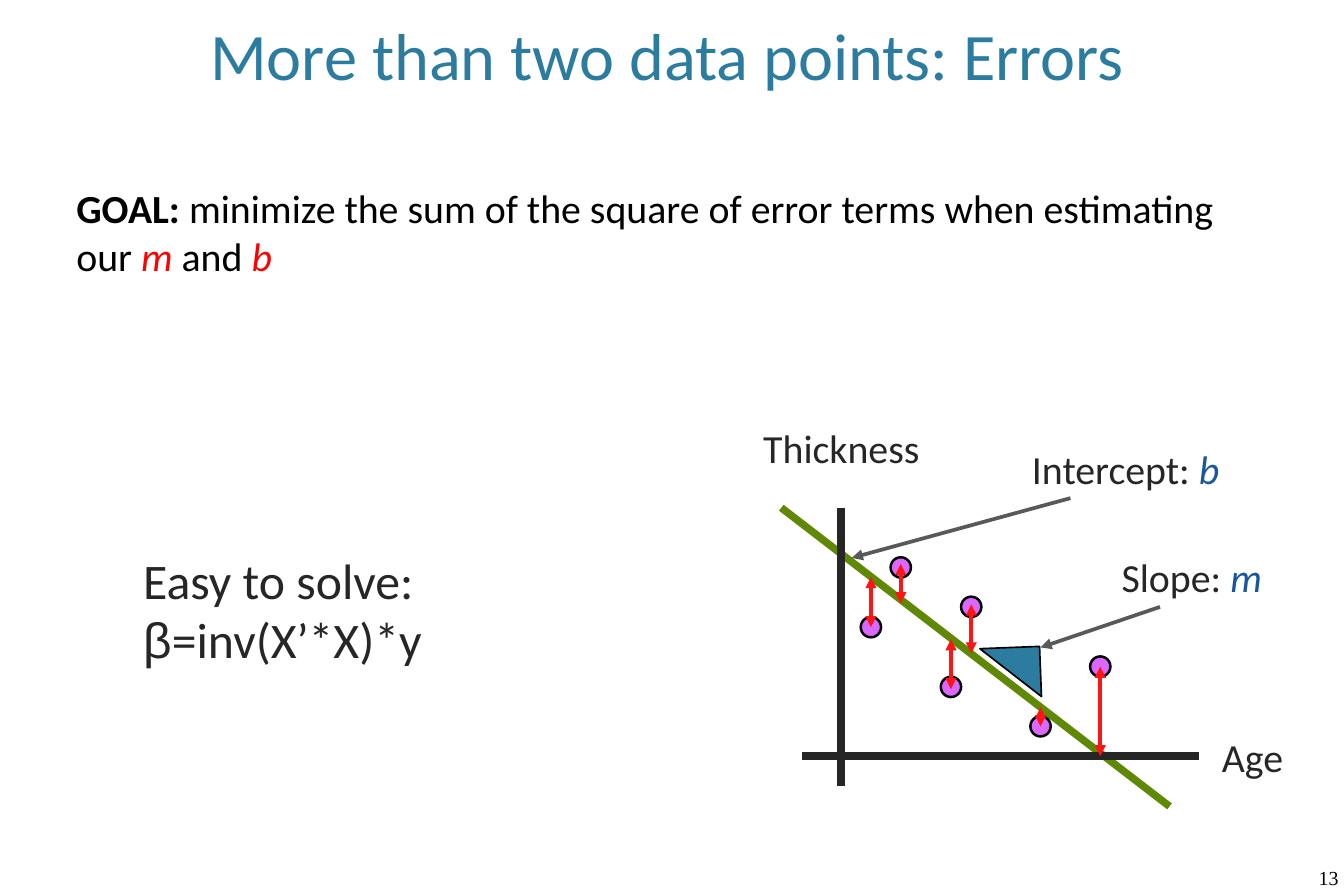
"""Builds a slide on fitting a line to several data points by least squares."""
import pptx
import pptx.dml.color
import pptx.enum.shapes
import pptx.enum.text
import pptx.oxml.ns
import pptx.util
from lxml import etree
from pptx.util import Inches

BLACK = pptx.dml.color.RGBColor(0x00, 0x00, 0x00)
DARK = pptx.dml.color.RGBColor(0x26, 0x26, 0x26)
GRAY = pptx.dml.color.RGBColor(0x59, 0x59, 0x59)
TEAL = pptx.dml.color.RGBColor(0x2C, 0x7C, 0x9F)
BLUE = pptx.dml.color.RGBColor(0x18, 0x57, 0x9B)
RED = pptx.dml.color.RGBColor(0xFF, 0x00, 0x00)
ERROR_RED = pptx.dml.color.RGBColor(0xFD, 0x14, 0x14)
GREEN = pptx.dml.color.RGBColor(0x5F, 0x88, 0x04)
VIOLET = pptx.dml.color.RGBColor(0xDA, 0x68, 0xFF)

deck = pptx.Presentation()
deck.slide_width, deck.slide_height = Inches(11.25), Inches(7.5)
slide = deck.slides.add_slide(deck.slide_layouts[6])


def add_text(left, top, width, height, size, lines, wrap=True):
    """Add lines of runs, each run being (text, colour, style, font)."""
    box = slide.shapes.add_textbox(Inches(left), Inches(top), Inches(width), Inches(height))
    frame = box.text_frame
    frame.word_wrap = wrap
    for index, line in enumerate(lines):
        paragraph = frame.add_paragraph() if index else frame.paragraphs[0]
        for text, color, style, font in line:
            run = paragraph.add_run()
            run.text = text
            run.font.name = font
            run.font.size = pptx.util.Pt(size)
            run.font.color.rgb = color
            run.font.bold = style == "bold"
            run.font.italic = style == "italic"
    return frame


def add_line(x1, y1, x2, y2, color, weight, arrowheads=()):
    """Add a straight line with arrowheads at the named ends."""
    line = slide.shapes.add_connector(
        pptx.enum.shapes.MSO_CONNECTOR.STRAIGHT, Inches(x1), Inches(y1), Inches(x2), Inches(y2))
    line.line.color.rgb = color
    line.line.width = pptx.util.Pt(weight)
    for end in arrowheads:
        etree.SubElement(line.line._get_or_add_ln(), pptx.oxml.ns.qn(f"a:{end}"), type="triangle")
    etree.SubElement(line._element.spPr, pptx.oxml.ns.qn("a:effectLst"))


add_text(10.94, 7.2, 0.62, 0.3, 12, [[("13", BLACK, "", "Times New Roman")]])

title = add_text(0.21, 0.02, 10.75, 0.81, 40,
                 [[("More than two data points: Errors", TEAL, "", "Calibri")]])
title.vertical_anchor = pptx.enum.text.MSO_ANCHOR.BOTTOM
title.paragraphs[0].alignment = pptx.enum.text.PP_ALIGN.CENTER

add_text(0.54, 1.49, 10.18, 1.72, 24, [[
    ("GOAL: ", BLACK, "bold", "Calibri"),
    ("minimize the sum of the square of error terms when estimating our ", BLACK, "", "Calibri"),
    ("m ", RED, "italic", "Calibri"),
    ("and ", BLACK, "", "Calibri"),
    ("b", RED, "italic", "Calibri"),
]])

add_line(6.54, 4.25, 9.79, 6.75, GREEN, 4.5)
add_line(7.13, 4.67, 8.96, 4.17, GRAY, 2.25, ["headEnd"])

slope = slide.shapes.add_shape(
    pptx.enum.shapes.MSO_SHAPE.RIGHT_TRIANGLE,
    Inches(8.21), Inches(5.42), Inches(0.5), Inches(0.42))
slope.rotation = 177.8
slope.shadow.inherit = False
slope.fill.solid()
slope.fill.fore_color.rgb = TEAL
slope.line.color.rgb = BLACK
slope.line.width = pptx.util.Pt(1)

for left, top, width, label, symbol in [
    (8.54, 3.67, 2.1, "Intercept: ", "b"),
    (9.29, 4.58, 1.66, "Slope: ", "m"),
    (6.29, 3.5, 1.78, "Thickness", ""),
    (10.13, 6.08, 0.8, "Age", ""),
]:
    runs = [(label, DARK, "", "Calibri")]
    if symbol:
        runs.append((symbol, BLUE, "italic", "Calibri"))
    add_text(left, top, width, 0.51, 24, [runs], wrap=False)

add_line(7.04, 4.25, 7.04, 6.58, DARK, 4.5)
add_line(6.71, 6.33, 10.04, 6.33, DARK, 4.5)
add_line(8.71, 5.42, 9.71, 5.08, GRAY, 2.25, ["headEnd"])

POINT_SIZE = 0.17
for x, y in [(7.54, 4.75), (8.71, 6.08), (9.21, 5.58), (7.96, 5.75), (8.13, 5.08), (7.29, 5.25)]:
    point = slide.shapes.add_shape(
        pptx.enum.shapes.MSO_SHAPE.OVAL, Inches(x - POINT_SIZE / 2), Inches(y - POINT_SIZE / 2),
        Inches(POINT_SIZE), Inches(POINT_SIZE))
    point.shadow.inherit = False
    point.fill.solid()
    point.fill.fore_color.rgb = VIOLET
    point.line.color.rgb = BLACK
    point.line.width = pptx.util.Pt(1.5)

for x, bottom, top in [(7.29, 5.25, 4.83), (7.96, 5.77, 5.35), (8.13, 5.47, 5.06),
                       (9.21, 6.33, 5.58), (7.54, 5.05, 4.72), (8.71, 6.08, 5.92)]:
    add_line(x, bottom, x, top, ERROR_RED, 2.25, ["headEnd", "tailEnd"])

add_text(1.1, 4.55, 4.75, 1.11, 30, [
    [("Easy to solve:", DARK, "", "Calibri")],
    [("β", DARK, "", "Arial"), ("=inv(X’*X)*y", DARK, "", "Calibri")],
])

deck.save("out.pptx")
